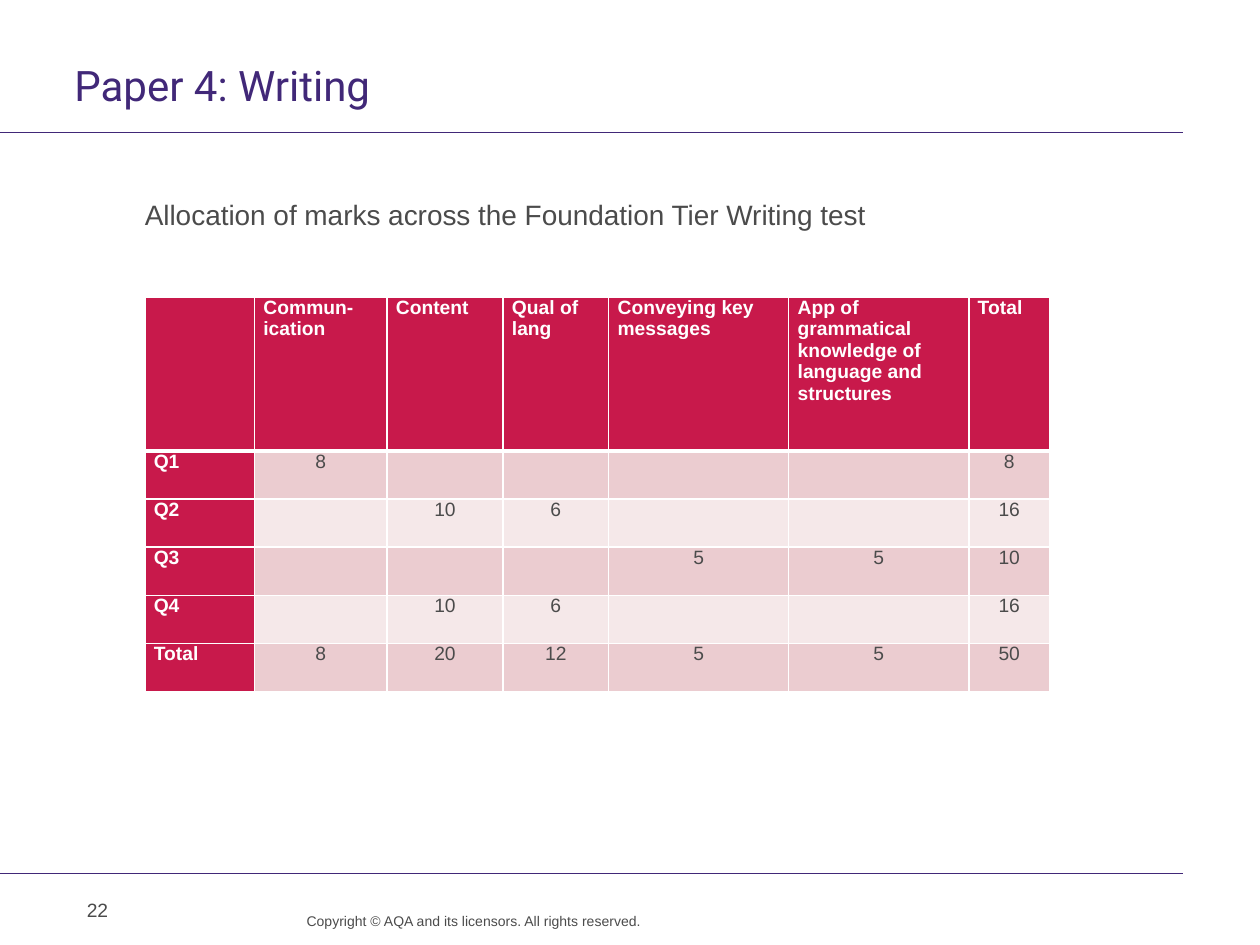
from dataclasses import dataclass

from lxml.etree import SubElement
from pptx import Presentation
from pptx.dml.color import RGBColor
from pptx.enum.shapes import MSO_CONNECTOR
from pptx.enum.text import PP_ALIGN as Align
from pptx.oxml.ns import qn
from pptx.util import Cm, Pt

PURPLE, GREY, WHITE = "412878", "4B4B4B", "FFFFFF"
CRIMSON, PINK, PALE = "C8194B", "EBCCD0", "F5E8E9"
INSET = 0.25

RULE_TOPS = (2.67, 17.6)
RULE_END = 23.85

COLUMN_WIDTHS = (2.21, 2.67, 2.34, 2.13, 3.63, 3.63, 1.63)
HEADER_HEIGHT, ROW_HEIGHT = 3.1, 0.97
MARKS = (
    ("", "Commun-ication", "Content", "Qual of lang", "Conveying key messages",
     "App of grammatical knowledge of language and structures", "Total"),
    ("Q1", "8", "", "", "", "", "8"),
    ("Q2", "", "10", "6", "", "", "16"),
    ("Q3", "", "", "", "5", "5", "10"),
    ("Q4", "", "10", "6", "", "", "16"),
    ("Total", "8", "20", "12", "5", "5", "50"),
)


@dataclass
class Label:
    text: str
    left: float
    top: float
    width: float
    height: float
    size: float
    color: str = GREY
    font: str = "Arial"
    align: Align = Align.LEFT
    line_points: float | None = None
    insets: tuple = (0, 0, INSET, 0)


LABELS = (
    Label("22", 1.5, 17.98, 5.92, 1.02, 11, insets=(INSET, 0.13, INSET, 0.13)),
    Label("Paper 4: Writing", 1.5, 1.22, 22.35, 1.19, 24, PURPLE, "Roboto",
          line_points=28),
    Label("Allocation of marks across the Foundation Tier Writing test",
          2.92, 3.99, 19.99, 13.41, 16),
    Label("Copyright © AQA and its licensors. All rights reserved.",
          5.49, 18.39, 7.44, 0.66, 8, align=Align.RIGHT, line_points=10,
          insets=(0, 0, 0, 0)),
)


def rgb(color: str) -> RGBColor:
    return RGBColor.from_string(color)


def set_margins(target, insets: tuple) -> None:
    left, top, right, bottom = insets
    target.margin_left, target.margin_top = Cm(left), Cm(top)
    target.margin_right, target.margin_bottom = Cm(right), Cm(bottom)


def add_span(para, text: str, size: float, color: str, font: str = "Arial",
             bold: bool = False) -> None:
    span = para.add_run()
    span.text = text
    span.font.size, span.font.name, span.font.bold = Pt(size), font, bold
    span.font.color.rgb = rgb(color)


def draw_label(page, label: Label) -> None:
    box = page.shapes.add_textbox(Cm(label.left), Cm(label.top),
                                  Cm(label.width), Cm(label.height))
    frame = box.text_frame
    frame.word_wrap = True
    set_margins(frame, label.insets)
    para = frame.paragraphs[0]
    para.alignment = label.align
    if label.line_points:
        para.line_spacing = Pt(label.line_points)
    add_span(para, label.text, label.size, label.color, label.font)


def draw_rule(page, top: float) -> None:
    rule = page.shapes.add_connector(MSO_CONNECTOR.STRAIGHT, Cm(0), Cm(top),
                                     Cm(RULE_END), Cm(top))
    rule.line.color.rgb = rgb(PURPLE)
    rule.line.width = Pt(0.6)
    SubElement(rule.element.spPr, qn("a:effectLst"))


def add_borders(cell, top: float, bottom: float) -> None:
    """Draw white borders; must come before the cell's fill."""
    properties = cell._tc.get_or_add_tcPr()
    for side, points in (("L", 1), ("R", 1), ("T", top), ("B", bottom)):
        line = SubElement(properties, qn(f"a:ln{side}"), w=str(Pt(points)))
        fill = SubElement(line, qn("a:solidFill"))
        SubElement(fill, qn("a:srgbClr"), val=WHITE)


def fill_cell(cell, text: str, row: int, column: int) -> None:
    is_heading = row == 0 or column == 0
    add_borders(cell, top=3 if row == 1 else 1, bottom=3 if row == 0 else 1)
    cell.fill.solid()
    band = PINK if row % 2 else PALE
    cell.fill.fore_color.rgb = rgb(CRIMSON if is_heading else band)
    set_margins(cell, (0.18, 0, 0.18, 0))
    if text:
        para = cell.text_frame.paragraphs[0]
        para.alignment = Align.LEFT if is_heading else Align.CENTER
        add_span(para, text, 11, WHITE if is_heading else GREY, bold=is_heading)


def draw_marks_table(page) -> None:
    heights = [HEADER_HEIGHT] + [ROW_HEIGHT] * (len(MARKS) - 1)
    table = page.shapes.add_table(
        len(MARKS), len(COLUMN_WIDTHS), Cm(2.92), Cm(5.99),
        Cm(sum(COLUMN_WIDTHS)), Cm(sum(heights))).table
    for column, width in zip(table.columns, COLUMN_WIDTHS):
        column.width = Cm(width)
    for row, height in zip(table.rows, heights):
        row.height = Cm(height)
    for row, texts in enumerate(MARKS):
        for column, text in enumerate(texts):
            fill_cell(table.cell(row, column), text, row, column)


def main() -> None:
    deck = Presentation()
    deck.slide_width, deck.slide_height = Cm(25.4), Cm(19.05)
    page = deck.slides.add_slide(deck.slide_layouts[6])
    for top in RULE_TOPS:
        draw_rule(page, top)
    for label in LABELS:
        draw_label(page, label)
    draw_marks_table(page)
    deck.save("out.pptx")


if __name__ == "__main__":
    main()
